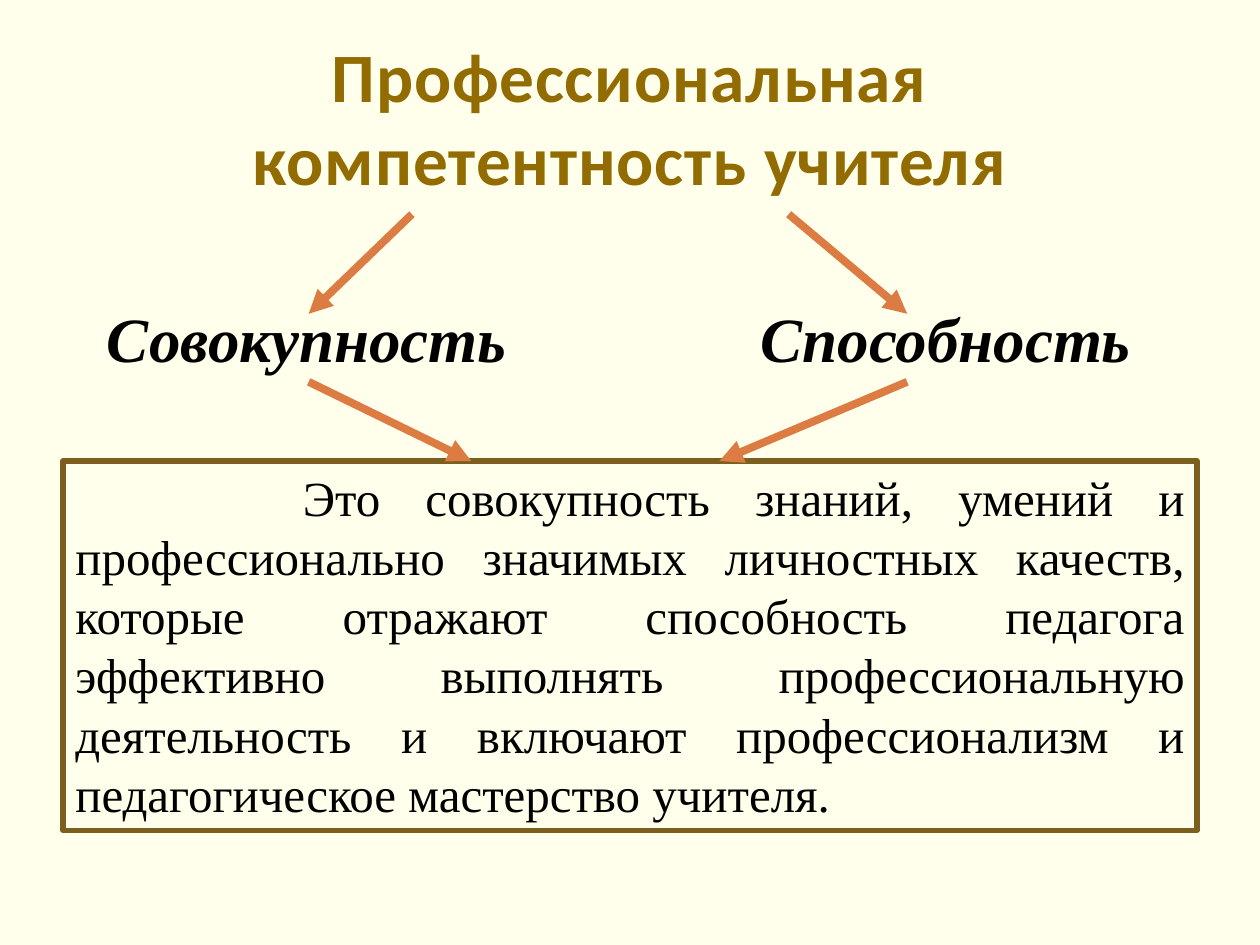
from lxml import etree
from pptx import Presentation
from pptx.dml.color import RGBColor
from pptx.enum import shapes, text
from pptx.oxml import ns
from pptx.util import Pt


def rgb(value):
    return RGBColor.from_string(value)


def write(tf, content, size=28, font="Times New Roman", color="000000", bold=False,
          italic=False, align=text.PP_ALIGN.LEFT, indent=0, leading=None, spacing=0):
    p = tf.paragraphs[0]
    p.alignment = align
    p.line_spacing = leading
    p.space_before = Pt(0)
    if indent:
        p._p.get_or_add_pPr().set("indent", str(Pt(indent)))
    r = p.add_run()
    r.text = content
    r.font.name, r.font.size = font, Pt(size)
    r.font.bold, r.font.italic = bold, italic
    r.font.color.rgb = rgb(color)
    if spacing:
        r._r.get_or_add_rPr().set("spc", str(int(spacing * 100)))


class Deck:
    """Holds the colours and the current slide, and adds each kind of element."""

    background, heading, arrow_color, border = "FFFFEB", "926C00", "DC7C42", "7C5F1E"

    def __init__(self, prs):
        self.s = prs.slides.add_slide(prs.slide_layouts[5])
        fill = self.s.background.fill
        fill.solid()
        fill.fore_color.rgb = rgb(self.background)

    def title(self, content, x, y, w, h):
        sp = self.s.shapes.title
        sp.left, sp.top, sp.width, sp.height = Pt(x), Pt(y), Pt(w), Pt(h)
        tf = sp.text_frame
        tf.vertical_anchor = text.MSO_ANCHOR.MIDDLE
        tf.margin_left = tf.margin_right = Pt(36)
        write(tf, content, size=39.6, font="Calibri", color=self.heading, bold=True,
              align=text.PP_ALIGN.CENTER, spacing=0.5)

    def label(self, content, x, y, w, h):
        tf = self.s.shapes.add_textbox(Pt(x), Pt(y), Pt(w), Pt(h)).text_frame
        tf.word_wrap = False
        tf.auto_size = text.MSO_AUTO_SIZE.SHAPE_TO_FIT_TEXT
        write(tf, content, size=36, bold=True, italic=True)

    def definition(self, content, x, y, w, h):
        sp = self.s.shapes.add_shape(shapes.MSO_SHAPE.RECTANGLE, Pt(x), Pt(y), Pt(w), Pt(h))
        sp.shadow.inherit = False
        sp.fill.background()
        sp.line.color.rgb, sp.line.width = rgb(self.border), Pt(3)
        tf = sp.text_frame
        tf.word_wrap = True
        tf.vertical_anchor = text.MSO_ANCHOR.TOP
        write(tf, content, align=text.PP_ALIGN.JUSTIFY, indent=130, leading=Pt(33.8))

    def arrow(self, x1, y1, x2, y2):
        c = self.s.shapes.add_connector(
            shapes.MSO_CONNECTOR.STRAIGHT, Pt(x1), Pt(y1), Pt(x2), Pt(y2))
        c.line.color.rgb, c.line.width = rgb(self.arrow_color), Pt(4.5)
        etree.SubElement(c.line._get_or_add_ln(), ns.qn("a:tailEnd"), type="triangle")
        etree.SubElement(c._element.spPr, ns.qn("a:effectLst"))


def main():
    prs = Presentation()
    prs.slide_width, prs.slide_height = Pt(720), Pt(540)
    deck = Deck(prs)
    deck.title("Профессиональная компетентность учителя", 36, 21.6, 648, 90)
    branches = [
        ("Совокупность", 54, 245.5, 235.4, 176.4, 269.3),
        ("Способность", 427.7, 228.2, 450.7, 518.4, 411.1),
    ]
    for name, left, width, start, middle, end in branches:
        deck.label(name, left, 167.8, width, 51.1)
        deck.arrow(start, 122.4, middle, 179.3)
    deck.definition(
        "Это совокупность знаний, умений и профессионально значимых личностных качеств, "
        "которые отражают способность педагога эффективно выполнять профессиональную "
        "деятельность и включают профессионализм и педагогическое мастерство учителя.",
        36, 263.5, 648, 211)
    for name, left, width, start, middle, end in branches:
        deck.arrow(middle, 218.2, end, 263.5)
    prs.save("out.pptx")


if __name__ == "__main__":
    main()
